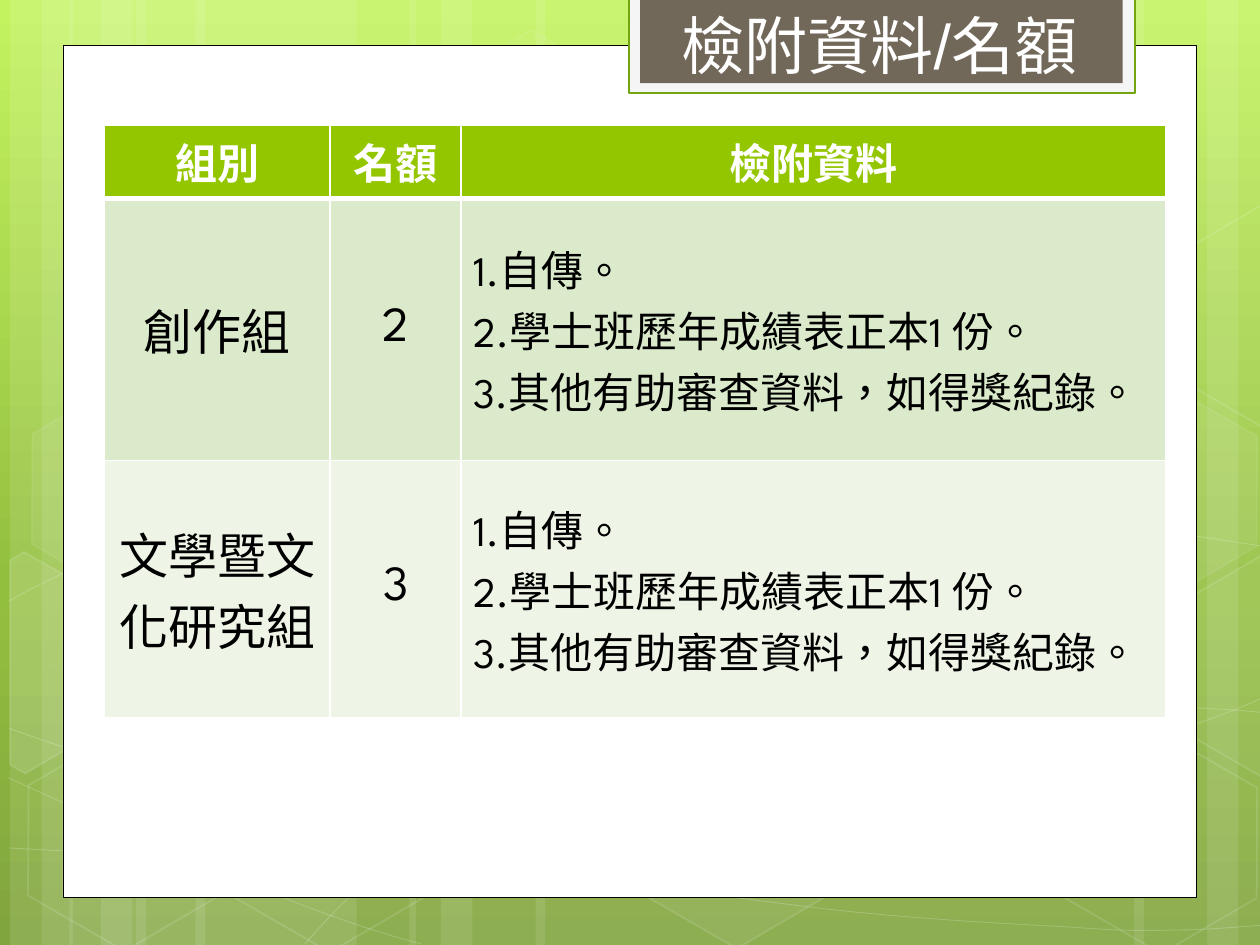
from copy import deepcopy

from lxml.etree import SubElement as Sub
from pptx import Presentation
from pptx.dml.color import RGBColor
from pptx.enum.shapes import MSO_SHAPE as Kind
from pptx.enum.text import MSO_ANCHOR as Anchor, MSO_AUTO_SIZE as Auto, PP_ALIGN as Align
from pptx.oxml.ns import qn
from pptx.util import Inches, Pt

WIDE, HIGH = 10, 7.5
WHITE = "FFFFFF"
GROUND = [(0, "C3F35F"), (0.62, "93BF3F"), (1, "81A53E")]

# Left edges of a wide, a thin and a middle stripe, and the wide one's width
STRIPES = [((1.08, 0.08, 0.33), 1.75), ((1.55, 0.55, 0.8), 1.75),
           ((7.33, 9.58, 9), 1.75), ((4.25, 3.25, 3.5), 3.08)]

# Each curve: a start point, then Bezier pieces of three points
CURVES = [
    [(0.07, 6.73), (0.61, 6.76), (1.15, 6.79), (1.9, 6.78), (2.65, 6.77), (3.58, 6.75),
     (4.58, 6.65), (5.58, 6.55), (7, 6.36), (7.92, 6.17), (8.83, 5.98), (9.77, 5.68),
     (10.07, 5.51)],
    [(0.07, 4.77), (0.36, 4.61), (0.65, 4.46), (1.21, 4.31), (1.78, 4.16), (2.59, 3.94),
     (3.47, 3.87), (4.36, 3.8), (5.44, 3.79), (6.54, 3.87), (7.64, 3.95), (9.47, 4.26),
     (10.07, 4.34)],
    [(0.06, 6.17), (1.27, 6.72), (2.47, 7.27), (3.34, 7.49)],
    [(0.07, 5.78), (0.38, 5.89), (0.7, 6), (1.28, 6.16), (1.86, 6.31), (2.73, 6.56),
     (3.57, 6.73), (4.4, 6.9), (5.45, 7.08), (6.28, 7.18), (7.11, 7.29), (8, 7.33),
     (8.53, 7.36), (9.05, 7.4), (9.19, 7.38), (9.45, 7.38), (9.71, 7.37), (9.89, 7.35),
     (10.07, 7.34)],
    [(2.42, 7.49), (2.6, 7.29), (2.78, 7.09), (3.02, 6.91), (3.26, 6.73), (3.6, 6.53),
     (3.88, 6.39), (4.16, 6.25), (4.33, 6.19), (4.7, 6.09), (5.06, 5.99), (5.73, 5.85),
     (6.08, 5.78), (6.44, 5.71), (6.49, 5.71), (6.8, 5.69), (7.11, 5.66), (7.6, 5.63),
     (7.94, 5.62), (8.29, 5.61), (8.86, 5.62), (8.86, 5.62), (9.08, 5.62), (9.31, 5.62),
     (9.53, 5.62), (9.71, 5.63), (9.88, 5.64), (9.97, 5.65), (10.06, 5.66),
     (10.03, 5.65), (10.06, 5.66)],
]

# Left, top, fill opacity (0 = none), line opacity
HEXES = [(3.34, 0.36, 4, 8), (4.97, 5.89, 6, 12), (0.11, 5.91, 0, 12),
         (0.14, 3.12, 7, 8), (1.74, 5.92, 0, 12), (7.53, 4.53, 10, 12),
         (8.34, 5.93, 0, 12), (8.34, 3.14, 7, 8)]

# Hexagons cut off by the slide's edge: points, fill opacity
CUTS = [
    ([(0.08, 4.45), (0.19, 4.38), (0.96, 4.82), (0.95, 5.7), (0.2, 6.14), (0.08, 6.07)], 10),
    ([(9.26, 4.85), (10.01, 4.41), (10.09, 4.46), (10.09, 6.13), (10.02, 6.17),
      (9.26, 5.73)], 4),
    ([(9.26, 2.07), (10.01, 1.63), (10.1, 1.68), (10.09, 3.35), (10.02, 3.39),
      (9.26, 2.95)], 0),
]

COLS, ROWS = (1.79, 1.04, 5.59), (0.52, 2.08, 2.04)
TINTS = ("94C600", "DCEACC", "EEF5E7")
NEEDS = "1.自傳。\n2.學士班歷年成績表正本1 份。\n3.其他有助審查資料，如得獎紀錄。"
CELLS = [("組別", "名額", "檢附資料"),
         ("創作組", "2", NEEDS),
         ("文學暨文化研究組", "3", NEEDS)]


def tone(color):
    return RGBColor.from_string(color)


def paint(fill, color, alpha=100):
    """Solid fill with an opacity in percent; 0 leaves it empty."""
    if not alpha:
        fill.background()
        return
    fill.solid()
    fill.fore_color.rgb = tone(color)
    if alpha < 100:
        node = fill._xPr.find(".//" + qn("a:srgbClr"))
        Sub(node, qn("a:alpha"), val=str(alpha * 1000))


def style(shape, color, alpha=100, line=None, width=1, dim=100):
    shape.shadow.inherit = False
    paint(shape.fill, color, alpha)
    paint(shape.line.fill, line or WHITE, dim if line else 0)
    if line:
        shape.line.width = Pt(width)


def block(slide, box, *look, kind=Kind.RECTANGLE):
    shape = slide.shapes.add_shape(kind, *map(Inches, box))
    style(shape, *look)
    return shape


def trace(slide, points, closed, *look):
    """Outline through points given in inches, drawn in 1/1000 inch units."""
    dots = [(round(x * 1000), round(y * 1000)) for x, y in points]
    pen = slide.shapes.build_freeform(*dots[0], scale=Inches(1) / 1000)
    pen.add_line_segments(dots[1:], close=closed)
    shape = pen.convert_to_shape()
    style(shape, *look)
    return shape


def bend(shape):
    """Turn each three straight pieces into one Bezier piece."""
    steps = list(shape._element.iter(qn("a:lnTo")))
    outline = steps[0].getparent()
    for i in range(0, len(steps), 3):
        curve = Sub(outline, qn("a:cubicBezTo"))
        for step in steps[i:i + 3]:
            curve.append(step[0])
            outline.remove(step)


def ground(slide):
    fill = slide.background.fill
    fill.gradient()
    fill.gradient_angle = 270
    stops = slide.element.find(".//" + qn("a:gsLst"))
    stops.append(deepcopy(stops[-1]))
    for stop, (place, color) in zip(fill.gradient_stops, GROUND):
        stop.position = place
        stop.color.rgb = tone(color)


def decor(slide):
    for lefts, wide in STRIPES:
        for x, w in zip(lefts, (wide, 0.5, 0.83)):
            block(slide, (x, 0, w, HIGH), WHITE, 10)
    for curve in CURVES:
        bend(trace(slide, curve, False, WHITE, 0, WHITE, 0.5, 20))
    for x, y, alpha, dim in HEXES:
        shape = block(slide, (x, y, 1.75, 1.52), WHITE, alpha, WHITE, 1, dim,
                      kind=Kind.HEXAGON)
        shape.adjustments[0] = 0.285
        shape.rotation = 30
    for points, alpha in CUTS:
        trace(slide, points, True, WHITE, alpha, WHITE, 1, 12)


def panel(slide):
    block(slide, (0.5, 0.36, 9, 6.76), WHITE, 100, "000000", 0.5)
    block(slide, (4.99, -0.02, 4.02, 0.76), "F5F5F5", 100, "74A510", 1.25)
    block(slide, (5.08, -0.02, 3.83, 0.68), "71685A")


def write(para, face, size, color, align, bold=False):
    para.alignment = align
    font = para.font
    font.name, font.size, font.bold = face, Pt(size), bold
    font.color.rgb = tone(color)
    for run in para.runs:  # Taiwanese punctuation forms
        run._r.get_or_add_rPr().set("lang", "zh-TW")


def edge(cell, side, width):
    line = Sub(cell._tc.get_or_add_tcPr(), qn("a:ln" + side), w=str(Pt(width)))
    Sub(Sub(line, qn("a:solidFill")), qn("a:srgbClr"), val=WHITE)


def grid(slide):
    box = map(Inches, (0.83, 0.99, sum(COLS), sum(ROWS)))
    table = slide.shapes.add_table(len(ROWS), len(COLS), *box).table
    for col, w in zip(table.columns, COLS):
        col.width = Inches(w)
    for row, h in zip(table.rows, ROWS):
        row.height = Inches(h)
    for r, texts in enumerate(CELLS):
        for c, text in enumerate(texts):
            cell = table.cell(r, c)
            cell.text = text
            cell.vertical_anchor = Anchor.MIDDLE
            for side in "LRTB":
                heavy = (r, side) in ((0, "B"), (1, "T"))
                edge(cell, side, 3 if heavy else 1)
            paint(cell.fill, TINTS[r])
            for para in cell.text_frame.paragraphs:
                write(para, "League Spartan", 28 if r and c < 2 else 24,
                      "000000" if r else WHITE,
                      Align.LEFT if r and c == 2 else Align.CENTER, r == 0)


def title(slide):
    shape = slide.shapes.title
    shape.left, shape.top, shape.width, shape.height = map(Inches, (5.31, 0, 3.7, 0.71))
    frame = shape.text_frame
    frame.text = "檢附資料/名額"
    frame.word_wrap, frame.auto_size = True, Auto.NONE
    frame.vertical_anchor = Anchor.TOP
    write(frame.paragraphs[0], "Arial", 36, WHITE, Align.LEFT)
    slide.shapes._spTree.append(shape._element)  # bring to front


def main():
    deck = Presentation()
    deck.slide_width, deck.slide_height = Inches(WIDE), Inches(HIGH)
    slide = deck.slides.add_slide(deck.slide_layouts[5])
    ground(slide)
    decor(slide)
    panel(slide)
    grid(slide)
    title(slide)
    deck.save("out.pptx")


if __name__ == "__main__":
    main()
